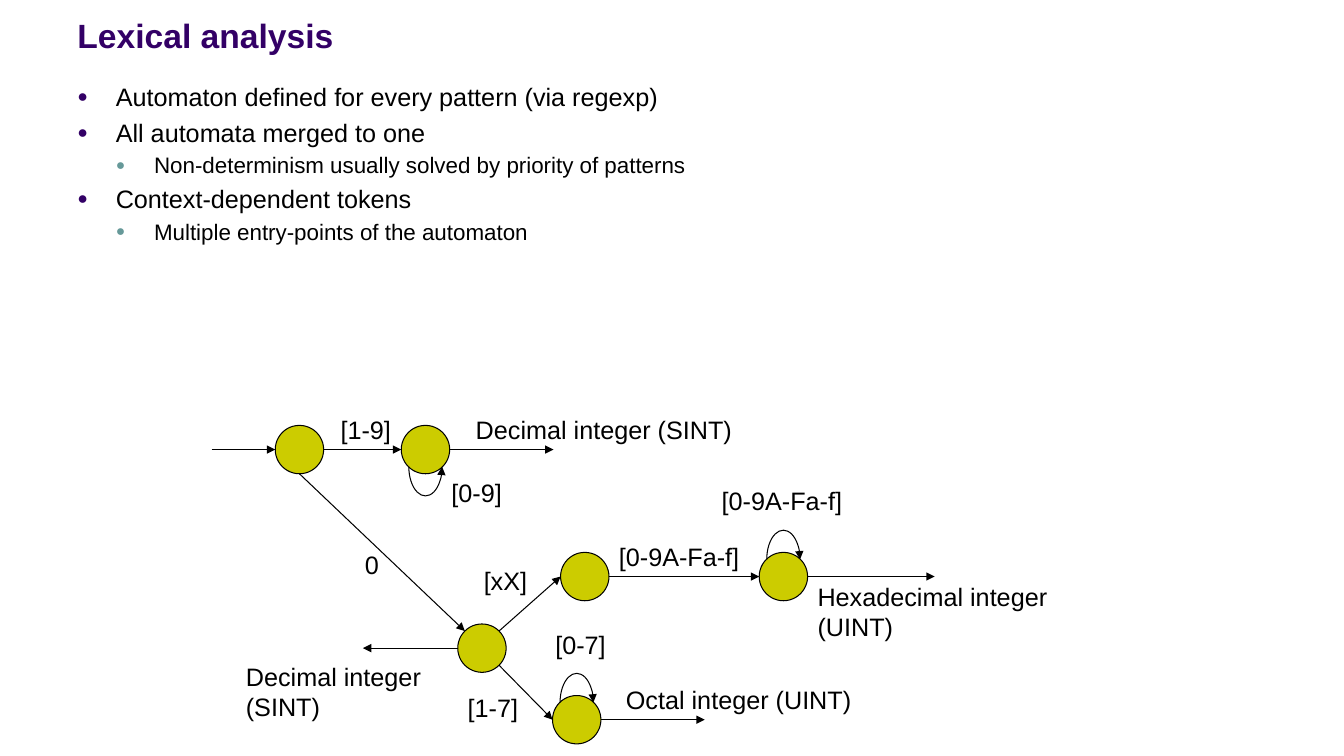
from dataclasses import dataclass
import math

import lxml.etree
import pptx
import pptx.dml.color
import pptx.enum.shapes
import pptx.enum.text
import pptx.oxml.ns
import pptx.util

Inches = pptx.util.Inches
Pt = pptx.util.Pt
RGBColor = pptx.dml.color.RGBColor
qn = pptx.oxml.ns.qn
Shape = pptx.enum.shapes.MSO_SHAPE
Fit = pptx.enum.text.MSO_AUTO_SIZE
Anchor = pptx.enum.text.MSO_ANCHOR

BLACK = RGBColor(0x00, 0x00, 0x00)
PURPLE = RGBColor(0x33, 0x00, 0x66)
TEAL = RGBColor(0x66, 0x99, 0x99)
OLIVE = RGBColor(0xCC, 0xCC, 0x00)

RADIUS = 0.24
DIAG = 0.17
LOOP_WIDE = 0.33
LOOP_DEEP = 0.29
INDENT = 0.38

Point = tuple[float, float]


@dataclass
class Item:
    text: str
    level: int = 0


@dataclass
class Label:
    text: str
    left: float
    top: float
    width: float
    height: float = 0.4
    wrap: bool = False


@dataclass
class Loop:
    state: str
    below: bool = False


STATES: dict[str, Point] = {
    "start": (2.97, 4.46),
    "decimal": (4.22, 4.46),
    "zero": (4.78, 6.43),
    "prefix": (5.8, 5.72),
    "octal": (5.72, 7.14),
    "hex": (7.77, 5.72),
}


def spot(state: str, angle: float, gap: float = 0) -> Point:
    """Point at a clockwise angle from east, gap beyond the state's rim."""
    x, y = STATES[state]
    turn = math.radians(angle)
    reach = RADIUS + gap
    return x + reach * math.cos(turn), y + reach * math.sin(turn)


ARROWS: list[tuple[Point, Point]] = [
    (spot("start", 180, 0.63), spot("start", 180)),
    (spot("start", 0), spot("decimal", 180)),
    (spot("start", 90), spot("zero", 225)),
    (spot("decimal", 0), spot("decimal", 0, 1.03)),
    (spot("zero", 315), spot("prefix", 180)),
    (spot("zero", 45), spot("octal", 180)),
    (spot("zero", 180), spot("zero", 180, 0.94)),
    (spot("octal", 0), spot("octal", 0, 1.03)),
    (spot("prefix", 0), spot("hex", 180)),
    (spot("hex", 0), spot("hex", 0, 1.26)),
]

LOOPS = [Loop("decimal", below=True), Loop("octal"), Loop("hex")]

LABELS = [
    Label("[1-9]", 3.28, 4.06, 0.7),
    Label("0", 3.52, 5.4, 0.34),
    Label("[0-9]", 4.38, 4.69, 0.7),
    Label("Decimal integer (SINT)", 4.62, 4.06, 3.62, wrap=True),
    Label("[xX]", 4.7, 5.56, 0.63),
    Label("[1-7]", 4.54, 6.82, 0.7),
    Label("Octal integer (UINT)", 6.11, 6.74, 3.23, wrap=True),
    Label("[0-7]", 5.41, 6.19, 0.7),
    Label("[0-9A-Fa-f]", 6.04, 5.32, 1.4),
    Label("[0-9A-Fa-f]", 7.06, 4.77, 1.4),
    Label("Hexadecimal integer (UINT)", 8.01, 5.72, 2.99, 0.71, True),
    Label("Decimal integer (SINT)", 2.34, 6.51, 2.09, 0.71, True),
]

ITEMS = [
    Item("Automaton defined for every pattern (via regexp)"),
    Item("All automata merged to one"),
    Item("Non-determinism usually solved by priority of patterns", 1),
    Item("Context-dependent tokens"),
    Item("Multiple entry-points of the automaton", 1),
]


def write(para, text: str, size: float = 18, color: RGBColor = BLACK,
          bold: bool = False) -> None:
    run = para.add_run()
    run.text = text
    style = {"name": "Arial", "size": Pt(size), "bold": bold}
    for key, value in style.items():
        setattr(run.font, key, value)
    run.font.color.rgb = color


def add_box(slide, left: float, top: float, width: float, height: float, **style):
    """Add a text box and return its text frame."""
    box = slide.shapes.add_textbox(
        Inches(left), Inches(top), Inches(width), Inches(height))
    for key, value in ({"word_wrap": True} | style).items():
        setattr(box.text_frame, key, value)
    return box.text_frame


def add_mark(para, level: int) -> None:
    """Give a paragraph its indent, spacing and bullet."""
    props = para._p.get_or_add_pPr()
    props.set("marL", str(Inches(INDENT * (level + 1))))
    props.set("indent", str(-Inches(INDENT)))
    props.set("lvl", str(level))

    def put(parent, tag: str, **values: str):
        return lxml.etree.SubElement(parent, qn(tag), values)

    put(put(props, "a:spcBef"), "a:spcPct", val="20000")
    put(put(props, "a:buClr"), "a:srgbClr", val=str(TEAL if level else PURPLE))
    put(props, "a:buSzPct", val="70000")
    put(props, "a:buFont", typeface="Arial")
    put(props, "a:buChar", char="●")


def set_line(shape, head: str = "") -> None:
    shape.line.color.rgb = BLACK
    shape.line.width = Pt(0.75)
    if head:
        line = shape.line._get_or_add_ln()
        lxml.etree.SubElement(line, qn(head), type="triangle")


def add_state(slide, center: Point) -> None:
    x, y = center
    size = Inches(2 * RADIUS)
    disc = slide.shapes.add_shape(
        Shape.OVAL, Inches(x - RADIUS), Inches(y - RADIUS), size, size)
    disc.shadow.inherit = False
    disc.fill.solid()
    disc.fill.fore_color.rgb = OLIVE
    set_line(disc)


def add_arrow(slide, begin: Point, end: Point) -> None:
    kind = pptx.enum.shapes.MSO_CONNECTOR.STRAIGHT
    ends = [Inches(value) for value in (*begin, *end)]
    arrow = slide.shapes.add_connector(kind, *ends)
    set_line(arrow, "a:tailEnd")
    lxml.etree.SubElement(arrow._element.spPr, qn("a:effectLst"))


def add_loop(slide, loop: Loop) -> None:
    """Draw a half ellipse from a state back to itself."""
    x, y = STATES[loop.state]
    base = y + (DIAG if loop.below else -DIAG)
    arc = slide.shapes.add_shape(
        Shape.ARC, Inches(x - LOOP_WIDE / 2), Inches(base - LOOP_DEEP),
        Inches(LOOP_WIDE), Inches(2 * LOOP_DEEP))
    half = 108  # 180 degrees in adjustment units
    arc.adjustments[0], arc.adjustments[1] = (0, half) if loop.below else (half, 0)
    arc.shadow.inherit = False
    arc.fill.background()
    set_line(arc, "a:headEnd" if loop.below else "a:tailEnd")


def main() -> None:
    deck = pptx.Presentation()
    deck.slide_width, deck.slide_height = Inches(13.33), Inches(7.5)
    slide = deck.slides.add_slide(deck.slide_layouts[6])

    title = add_box(slide, 0.67, 0.13, 11, 0.47, vertical_anchor=Anchor.BOTTOM)
    write(title.paragraphs[0], "Lexical analysis", 24, PURPLE, True)

    body = add_box(slide, 0.67, 0.76, 12, 6.28)
    for index, item in enumerate(ITEMS):
        para = body.add_paragraph() if index else body.paragraphs[0]
        add_mark(para, item.level)
        write(para, item.text, 16 if item.level else 18)

    for center in STATES.values():
        add_state(slide, center)
    for begin, end in ARROWS:
        add_arrow(slide, begin, end)
    for loop in LOOPS:
        add_loop(slide, loop)
    for label in LABELS:
        frame = add_box(slide, label.left, label.top, label.width, label.height,
                        word_wrap=label.wrap, auto_size=Fit.SHAPE_TO_FIT_TEXT)
        write(frame.paragraphs[0], label.text)

    deck.save("out.pptx")


if __name__ == "__main__":
    main()
